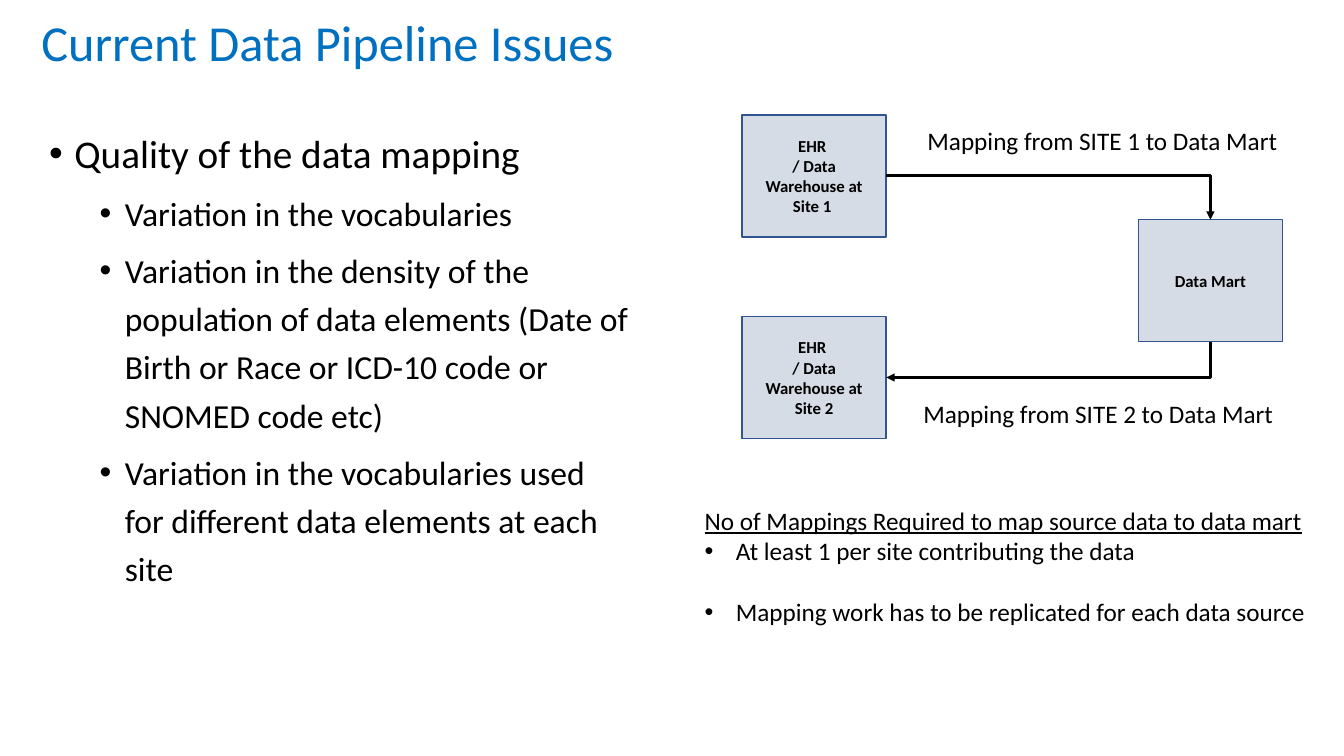
from lxml import etree
from pptx import Presentation
from pptx.dml.color import RGBColor
from pptx.enum.shapes import MSO_CONNECTOR, MSO_SHAPE
from pptx.enum.text import MSO_ANCHOR, MSO_AUTO_SIZE, PP_ALIGN
from pptx.oxml.ns import qn
from pptx.util import Inches, Pt

RECT = MSO_SHAPE.RECTANGLE
ELBOW = MSO_CONNECTOR.ELBOW
MIDDLE = MSO_ANCHOR.MIDDLE
LEFT, CENTER = PP_ALIGN.LEFT, PP_ALIGN.CENTER
NO_FIT = MSO_AUTO_SIZE.NONE
TOP_SITE, BOTTOM_SITE, RIGHT_SITE = 0, 2, 3

FONT = "Calibri"
COLORS = {"title": "0070C0", "text": "000000", "box": "D6DCE5", "border": "325491"}
BOX_W, BOX_H = 1.43, 1.21
SITE_X = 7.36

ISSUES = [
    "Variation in the vocabularies",
    "Variation in the density of the population of data elements "
    "(Date of Birth or Race or ICD-10 code or SNOMED code etc)",
    "Variation in the vocabularies used for different data elements at each site",
]


def color(name):
    return RGBColor.from_string(COLORS[name])


def add_run(p, text, size, name="text", bold=False, underline=False):
    r = p.add_run()
    r.text = text
    r.font.name = FONT
    r.font.size = Pt(size)
    r.font.bold = bold
    r.font.underline = underline
    r.font.color.rgb = color(name)


def next_paragraph(tf):
    return tf.paragraphs[0] if not tf.paragraphs[0].runs else tf.add_paragraph()


def add_bullet(tf, text, size, margin, hang, before=0, spacing=None, level=0):
    p = next_paragraph(tf)
    p.level = level
    p.space_before = Pt(before)
    p.line_spacing = spacing
    pPr = p._p.get_or_add_pPr()
    pPr.set("marL", str(Inches(margin)))
    pPr.set("indent", str(-Inches(hang)))
    etree.SubElement(pPr, qn("a:buFont")).set("typeface", "Arial")
    etree.SubElement(pPr, qn("a:buChar")).set("char", "•")
    add_run(p, text, size)


def add_text_box(s, x, y, w, h, wrap=False):
    tf = s.shapes.add_textbox(Inches(x), Inches(y), Inches(w), Inches(h)).text_frame
    tf.word_wrap = wrap
    return tf


def add_title(s, text):
    sp = s.shapes.title
    sp.left, sp.top, sp.width, sp.height = (Inches(v) for v in (0.31, -0.07, 11.5, 1.04))
    tf = sp.text_frame
    tf.auto_size = NO_FIT
    tf.vertical_anchor = MIDDLE
    p = tf.paragraphs[0]
    p.alignment = LEFT
    p.line_spacing = 0.9
    add_run(p, text, 36, "title")


def add_box(s, x, y, lines):
    sp = s.shapes.add_shape(RECT, Inches(x), Inches(y), Inches(BOX_W), Inches(BOX_H))
    sp.shadow.inherit = False
    sp.fill.solid()
    sp.fill.fore_color.rgb = color("box")
    sp.line.color.rgb = color("border")
    sp.line.width = Pt(1)
    tf = sp.text_frame
    tf.word_wrap = True
    tf.vertical_anchor = MIDDLE
    for line in lines:
        p = next_paragraph(tf)
        p.alignment = CENTER
        add_run(p, line, 12, bold=True)
    return sp


def add_arrow(s, source, source_site, target, target_site, turned=False):
    c = s.shapes.add_connector(ELBOW, 0, 0, 0, 0)
    c.begin_connect(source, source_site)
    c.end_connect(target, target_site)
    spPr = c._element.spPr
    spPr.find(qn("a:prstGeom")).set("prst", "bentConnector2")
    if turned:
        xfrm = spPr.find(qn("a:xfrm"))
        xfrm.attrib.pop("flipH", None)
        xfrm.set("rot", str(90 * 60000))
        shift = (c.width - c.height) // 2
        c.left, c.top = c.left + shift, c.top - shift
        c.width, c.height = c.height, c.width
    c.line.color.rgb = color("text")
    c.line.width = Pt(2)
    etree.SubElement(c.line._get_or_add_ln(), qn("a:tailEnd")).set("type", "triangle")
    etree.SubElement(spPr, qn("a:effectLst"))


def add_label(s, x, y, text):
    tf = add_text_box(s, x, y, 3.71, 0.4)
    add_run(tf.paragraphs[0], text, 18)


def add_issues(s):
    tf = add_text_box(s, 0.39, 1.14, 5.97, 5.66, wrap=True)
    add_bullet(tf, "Quality of the data mapping", 28, 0.25, 0.25, 6, 1.2)
    for issue in ISSUES:
        add_bullet(tf, issue, 24, 0.75, 0.25, 6, 1.2, level=1)


def add_mapping_diagram(s):
    site_1 = add_box(s, SITE_X, 1.14, ["EHR ", "/ Data Warehouse at Site 1 "])
    mart = add_box(s, 11.29, 2.18, ["Data Mart"])
    site_2 = add_box(s, SITE_X, 3.14, ["EHR ", "/ Data Warehouse at Site 2"])
    add_arrow(s, site_1, RIGHT_SITE, mart, TOP_SITE)
    add_arrow(s, mart, BOTTOM_SITE, site_2, RIGHT_SITE, turned=True)
    add_label(s, 9.1, 1.19, "Mapping from SITE 1 to Data Mart")
    add_label(s, 9.06, 3.9, "Mapping from SITE 2 to Data Mart")


def add_mapping_count(s):
    tf = add_text_box(s, 6.89, 4.96, 6.29, 1.31)
    add_run(tf.paragraphs[0], "No of Mappings Required to map source data to data mart",
            18, underline=True)
    add_bullet(tf, "At least 1 per site contributing the data", 18, 0.31, 0.31)
    add_bullet(tf, "Mapping work has to be replicated for each data source",
               18, 0.31, 0.31, before=22)


def main():
    prs = Presentation()
    prs.slide_width, prs.slide_height = Inches(13.33), Inches(7.5)
    s = prs.slides.add_slide(prs.slide_layouts[5])
    add_title(s, "Current Data Pipeline Issues")
    add_issues(s)
    add_mapping_diagram(s)
    add_mapping_count(s)
    prs.save("out.pptx")


if __name__ == "__main__":
    main()
